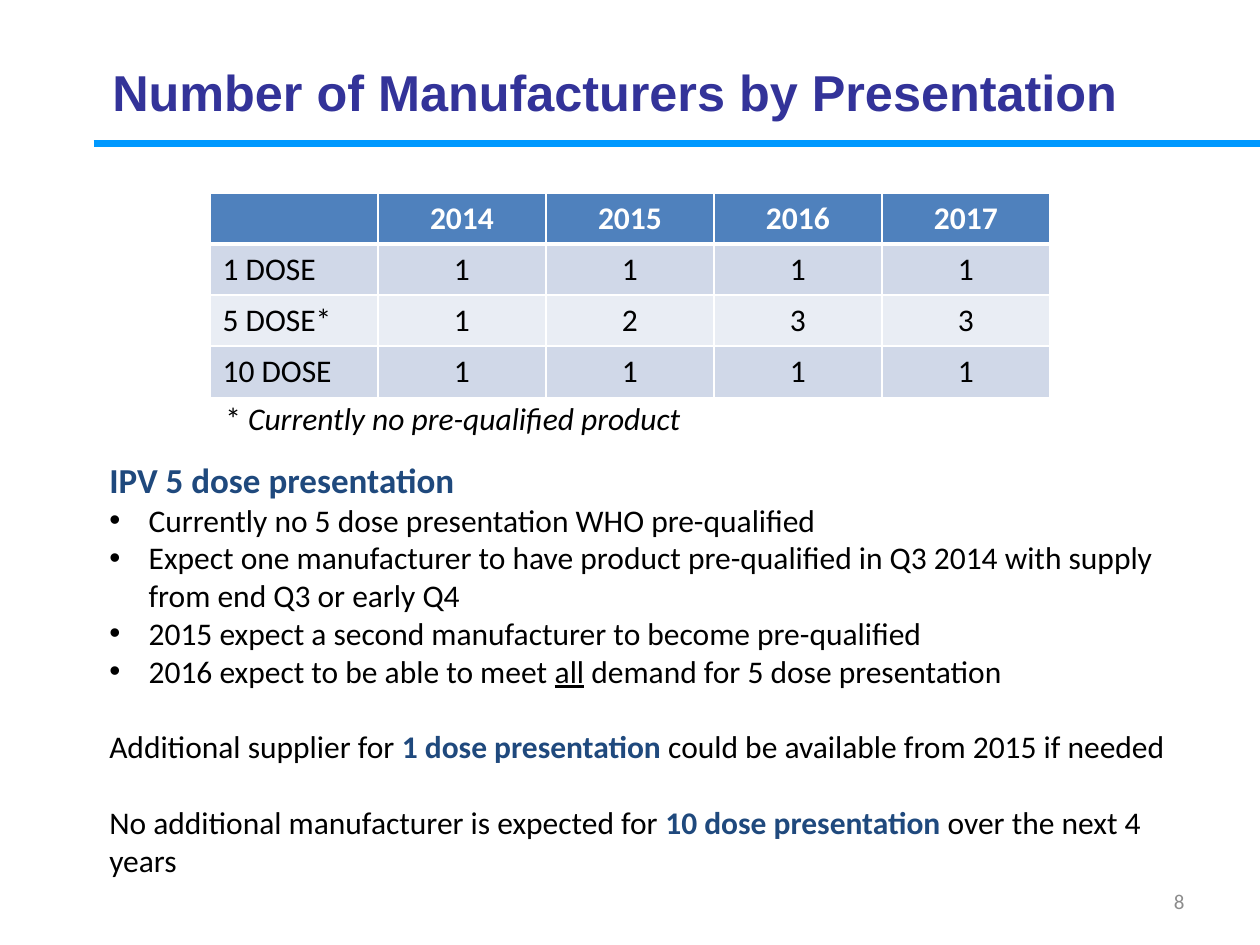
"""Build a slide on the number of vaccine manufacturers by presentation."""
from dataclasses import dataclass

from lxml import etree
from pptx import Presentation
from pptx import util as u
from pptx.dml.color import RGBColor
from pptx.enum import shapes, text
from pptx.oxml import ns


@dataclass(frozen=True)
class Theme:
    """Colours, fonts and type sizes of the slide."""
    title: str = "333399"
    rule: str = "0099FF"
    header: str = "4F81BD"
    bands: tuple = ("D0D8E8", "E9EDF4")
    accent: str = "1F497D"
    ink: str = "000000"
    paper: str = "FFFFFF"
    muted: str = "8C8C8C"
    title_font: str = "Arial"
    body_font: str = "Calibri"
    title_size: float = 28.8
    heading_size: float = 20
    body_size: float = 18
    number_size: float = 12


THEME = Theme()
ALIGN = text.PP_ALIGN
YEARS = ("", "2014", "2015", "2016", "2017")
DOSES = (
    ("1 DOSE", "1", "1", "1", "1"),
    ("5 DOSE*", "1", "2", "3", "3"),
    ("10 DOSE", "1", "1", "1", "1"),
)
BULLETS = (
    ("Currently no 5 dose presentation WHO pre-qualified",),
    ("Expect one manufacturer to have product pre-qualified in Q3 2014 "
     "with supply from end Q3 or early Q4",),
    ("2015 expect a second manufacturer to become pre-qualified",),
    ("2016 expect to be able to meet ", "all", " demand for 5 dose presentation"),
)
OUTLOOK = (
    ("Additional supplier for ", "1 dose presentation ",
     "could be available from 2015 if needed"),
    ("No additional manufacturer is expected for ", "10 dose presentation ",
     "over the next 4 years"),
)


def add_span(para, words, size=THEME.body_size, color=THEME.ink,
             font=THEME.body_font, bold=False, italic=False, underline=False):
    """Add one formatted run to a paragraph."""
    span = para.add_run()
    span.text = words
    span.font.name, span.font.size = font, u.Pt(size)
    span.font.color.rgb = RGBColor.from_string(color)
    span.font.bold, span.font.italic, span.font.underline = bold, italic, underline


def place(shape, left, top, width, height):
    """Move and size a shape in points."""
    shape.left, shape.top = u.Pt(left), u.Pt(top)
    shape.width, shape.height = u.Pt(width), u.Pt(height)


def add_title(page, words):
    """Fill and format the title placeholder."""
    title = page.shapes.title
    place(title, 45.4, 32.4, 612, 39.6)
    frame = title.text_frame
    frame.auto_size = text.MSO_AUTO_SIZE.NONE
    frame.vertical_anchor = text.MSO_ANCHOR.MIDDLE
    para = frame.paragraphs[0]
    para.alignment = ALIGN.CENTER
    add_span(para, words, THEME.title_size, THEME.title, THEME.title_font, bold=True)


def add_rule(page, left, right, top):
    """Draw the horizontal rule under the title."""
    rule = page.shapes.add_connector(
        shapes.MSO_CONNECTOR.STRAIGHT, u.Pt(left), u.Pt(top), u.Pt(right), u.Pt(top))
    rule.line.color.rgb = RGBColor.from_string(THEME.rule)
    rule.line.width = u.Pt(4)
    etree.SubElement(rule.element.spPr, ns.qn("a:effectLst"))


def add_box(page, left, top, width, height, wrap=True):
    """Add a text box and return its frame."""
    box = page.shapes.add_textbox(0, 0, 0, 0)
    place(box, left, top, width, height)
    box.text_frame.word_wrap = wrap
    return box.text_frame


def set_bullet(para, indent):
    """Give a paragraph a bullet with a hanging indent."""
    props = para._p.get_or_add_pPr()
    props.set("marL", str(u.Pt(indent)))
    props.set("indent", str(-u.Pt(indent)))
    etree.SubElement(props, ns.qn("a:buFont"), typeface="Arial")
    etree.SubElement(props, ns.qn("a:buChar"), char="•")


def set_borders(cell, top, bottom):
    """Draw the four borders of a cell, with the top and bottom widths given."""
    props = cell._tc.get_or_add_tcPr()
    for index, (side, width) in enumerate((("L", 1), ("R", 1), ("T", top), ("B", bottom))):
        line = etree.Element(ns.qn(f"a:ln{side}"), w=str(u.Pt(width)))
        fill = etree.SubElement(line, ns.qn("a:solidFill"))
        etree.SubElement(fill, ns.qn("a:srgbClr"), val=THEME.paper)
        props.insert(index, line)


def add_dose_table(page):
    """Add the table of manufacturers by dose and year."""
    rows = (YEARS,) + DOSES
    column, height = 96, 29.2
    table = page.shapes.add_table(
        len(rows), len(YEARS), u.Pt(120), u.Pt(110.2),
        u.Pt(column * len(YEARS)), u.Pt(height * len(rows))).table
    for row_index, row in enumerate(rows):
        table.rows[row_index].height = u.Pt(height)
        header = row_index == 0
        color = THEME.header if header else THEME.bands[(row_index - 1) % 2]
        for column_index, words in enumerate(row):
            cell = table.cell(row_index, column_index)
            cell.fill.solid()
            cell.fill.fore_color.rgb = RGBColor.from_string(color)
            set_borders(cell, 3 if row_index == 1 else 1, 3 if header else 1)
            para = cell.text_frame.paragraphs[0]
            para.alignment = ALIGN.CENTER if column_index else ALIGN.LEFT
            if words:
                add_span(para, words, color=THEME.paper if header else THEME.ink,
                         bold=header)


def add_commentary(page):
    """Add the heading, the bullets and the outlook paragraphs."""
    frame = add_box(page, 55.4, 258.5, 633.6, 249.8)
    add_span(frame.paragraphs[0], "IPV 5 dose presentation",
             THEME.heading_size, THEME.accent, bold=True)
    for parts in BULLETS:
        para = frame.add_paragraph()
        set_bullet(para, 22.5)
        for index, words in enumerate(parts):
            add_span(para, words, underline=index == 1)
    for parts in OUTLOOK:
        para = frame.add_paragraph()
        para.space_before = u.Pt(21.6)
        for index, words in enumerate(parts):
            strong = index == 1
            add_span(para, words, color=THEME.accent if strong else THEME.ink, bold=strong)


def add_footnote(page):
    """Add the note under the table."""
    para = add_box(page, 121.7, 224.6, 285, 29, wrap=False).paragraphs[0]
    add_span(para, "* ")
    add_span(para, "Currently no pre-qualified product", italic=True)


def add_page_number(page, number):
    """Add the page number at the lower right."""
    frame = add_box(page, 516, 500.4, 168, 28.8)
    frame.vertical_anchor = text.MSO_ANCHOR.MIDDLE
    para = frame.paragraphs[0]
    para.alignment = ALIGN.RIGHT
    add_span(para, number, THEME.number_size, THEME.muted)


def main():
    """Build and save the deck."""
    deck = Presentation()
    deck.slide_width, deck.slide_height = u.Pt(720), u.Pt(540)
    page = deck.slides.add_slide(deck.slide_layouts[5])
    add_rule(page, 53.5, 720, 82)
    add_title(page, "Number of Manufacturers by Presentation")
    add_page_number(page, "8")
    add_dose_table(page)
    add_commentary(page)
    add_footnote(page)
    deck.save("out.pptx")


if __name__ == "__main__":
    main()
